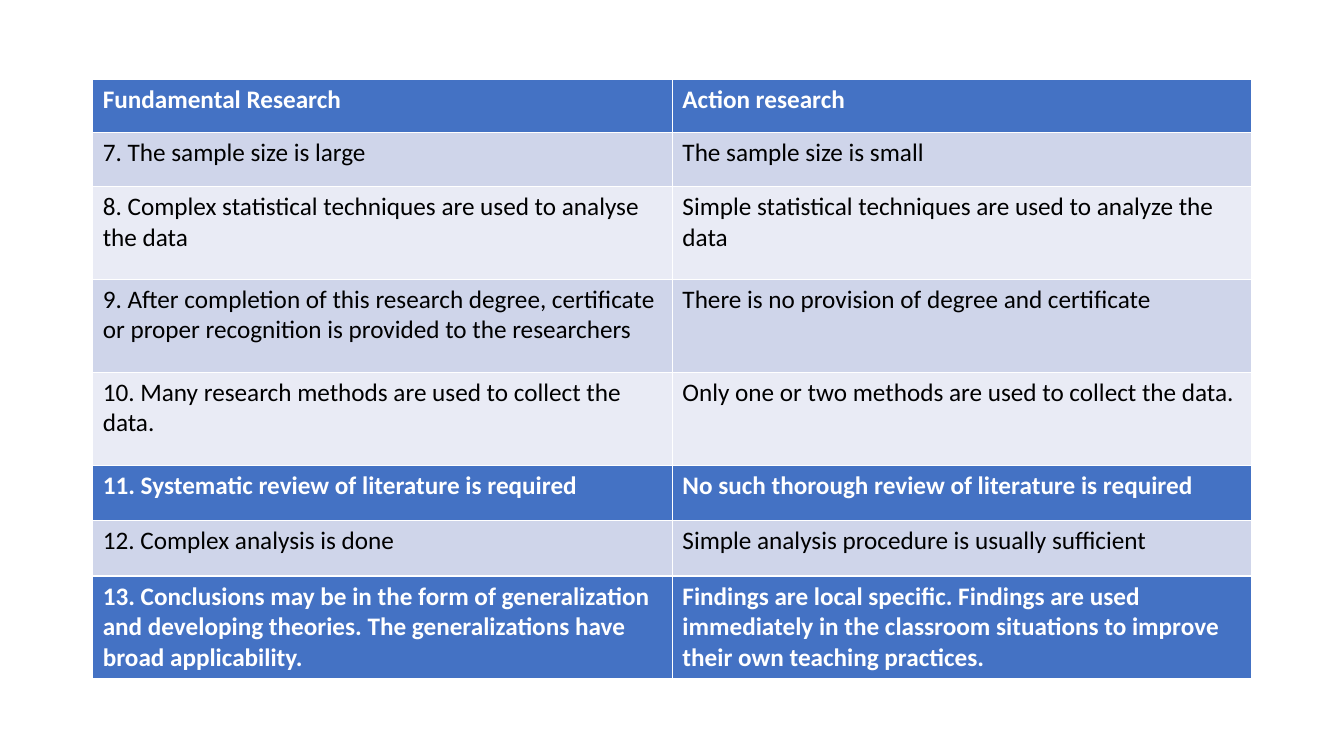
from dataclasses import dataclass

from pptx import Presentation
from pptx import util as u
from pptx.dml.color import RGBColor
from pptx.slide import Slide
from pptx.table import _Cell as Cell


@dataclass(frozen=True)
class Theme:
    font: str = "Calibri"
    size: int = 18
    head: str = "4472C4"
    bands: tuple[str, str] = ("CFD5EA", "E9EBF5")
    light: str = "FFFFFF"
    dark: str = "000000"


@dataclass(frozen=True)
class Row:
    share: float
    left: str
    right: str


THEME = Theme()
WIDE, HIGH = u.Inches(13.33), u.Inches(7.5)
LEFT, TOP, COL = 6.9, 10.5, 43.13
SHORT, TALL, MID, LAST = 7.07, 12.3, 7.33, 13.33

BLOCKS: list[list[Row]] = [
    [
        Row(SHORT, "Fundamental Research", "Action research"),
        Row(SHORT, "7. The sample size is large", "The sample size is small"),
        Row(TALL, "8. Complex statistical techniques are used to analyse the data",
            "Simple statistical techniques are used to analyze the data"),
        Row(TALL, "9. After completion of this research degree, certificate or proper "
            "recognition is provided to the researchers",
            "There is no provision of degree and certificate"),
        Row(TALL, "10. Many research methods are used to collect the data.",
            "Only one or two methods are used to collect the data."),
    ],
    [
        Row(MID, "11. Systematic review of literature is required",
            "No such thorough review of literature is required"),
        Row(MID, "12. Complex analysis is done",
            "Simple analysis procedure is usually sufficient"),
    ],
    [
        Row(LAST, "13. Conclusions may be in the form of generalization and developing "
            "theories. The generalizations have broad applicability.",
            "Findings are local specific. Findings are used immediately in the classroom "
            "situations to improve their own teaching practices."),
    ],
]


def across(share: float) -> u.Emu:
    return u.Emu(round(WIDE * share / 100))


def down(share: float) -> u.Emu:
    return u.Emu(round(HIGH * share / 100))


def fill_cell(cell: Cell, words: str, line: int) -> None:
    head = line == 0
    cell.fill.solid()
    cell.fill.fore_color.rgb = RGBColor.from_string(
        THEME.head if head else THEME.bands[(line - 1) % 2])
    run = cell.text_frame.paragraphs[0].add_run()
    run.text = words
    run.font.name = THEME.font
    run.font.size = u.Pt(THEME.size)
    run.font.bold = head
    run.font.color.rgb = RGBColor.from_string(THEME.light if head else THEME.dark)


def draw_block(slide: Slide, rows: list[Row], top: float) -> float:
    tall = sum(row.share for row in rows)
    grid = slide.shapes.add_table(
        len(rows), 2, across(LEFT), down(top), across(2 * COL), down(tall)).table
    for col in grid.columns:
        col.width = across(COL)
    for line, row in enumerate(rows):
        grid.rows[line].height = down(row.share)
        for side, words in enumerate((row.left, row.right)):
            fill_cell(grid.cell(line, side), words, line)
    return top + tall


def main() -> None:
    deck = Presentation()
    deck.slide_width, deck.slide_height = WIDE, HIGH
    slide = deck.slides.add_slide(deck.slide_layouts[6])
    top = TOP
    for rows in BLOCKS:
        top = draw_block(slide, rows, top)
    deck.save("out.pptx")


if __name__ == "__main__":
    main()
